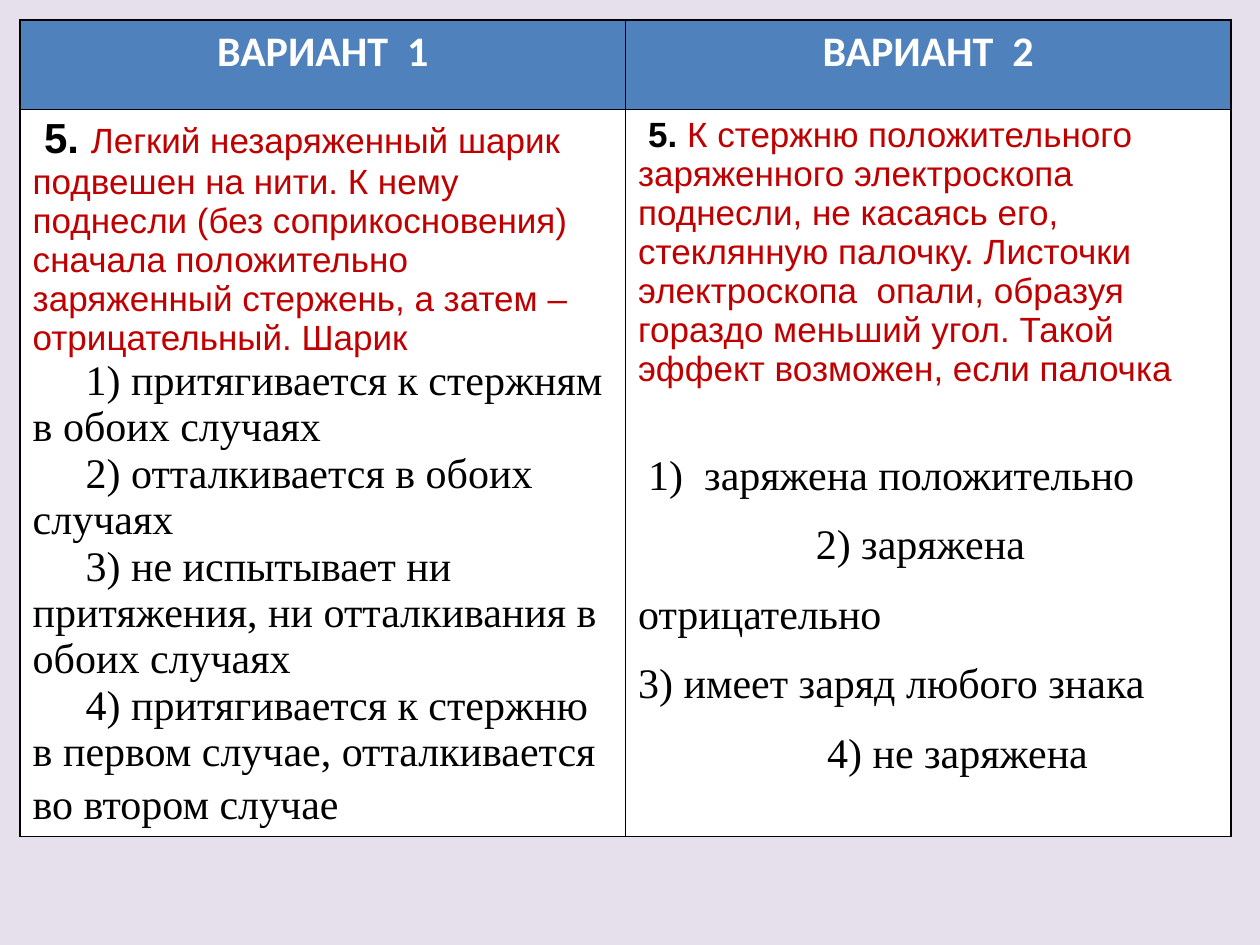
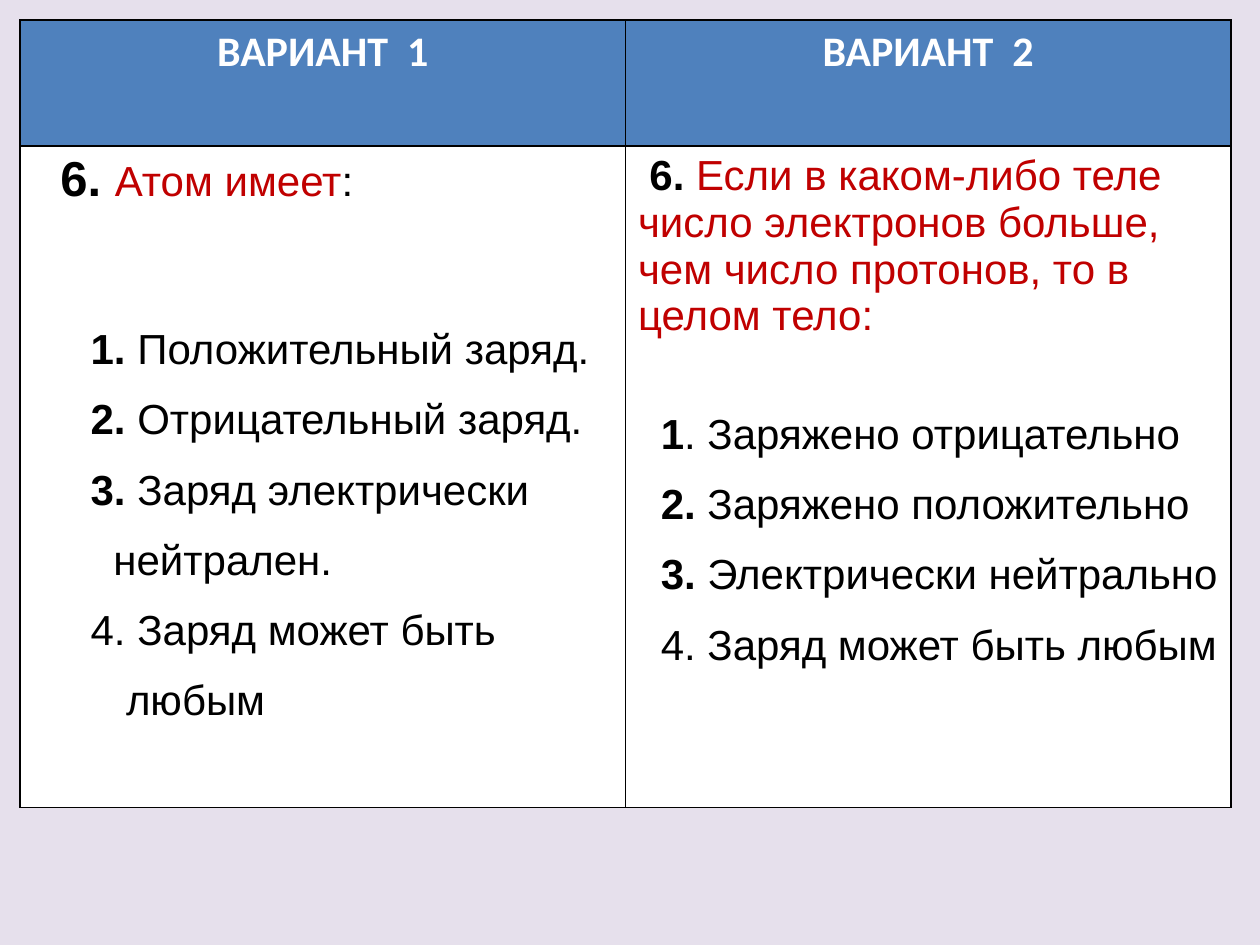
from lxml.etree import SubElement
from pptx import Presentation
from pptx.dml.color import RGBColor
from pptx.enum.text import PP_ALIGN
from pptx.oxml.ns import qn
from pptx.util import Inches, Pt

BACK, HEAD, WHITE, BLACK, RED = "E6E0EC", "4F81BD", "FFFFFF", "000000", "C00000"


def rgb(value):
    """Turn a hex string into a colour."""
    return RGBColor.from_string(value)


def fmt(size=24, name="Arial", color=BLACK, bold=False):
    """Describe the format of a run."""
    return dict(size=Pt(size), name=name, bold=bold, color=color)


PLAIN, BOLD = fmt(), fmt(bold=True)
SERIF = fmt(name="Times New Roman")
TITLE = fmt(name="Calibri", color=WHITE, bold=True)
TASK, SMALL_TASK = fmt(color=RED), fmt(20, color=RED)


def para(*runs, indent=0, before=0, spacing=None):
    """Describe a paragraph: its runs, first-line indent and spacing."""
    return dict(runs=runs, indent=indent, before=before, spacing=spacing)


def options(items, gap):
    """Describe widely spaced answers with a gap above the first one."""
    return [para(*runs, indent=indent, before=0 if i else gap, spacing=1.5)
            for i, (indent, *runs) in enumerate(items)]


class Deck:
    """Holds the presentation, its style and the current slide."""

    def __init__(self):
        """Start a 4:3 presentation."""
        self.prs = Presentation()
        self.prs.slide_width, self.prs.slide_height = Inches(10), Inches(7.5)

    def slide(self):
        """Add a slide with the shared background."""
        self.s = self.prs.slides.add_slide(self.prs.slide_layouts[6])
        fill = self.s.background.fill
        fill.solid()
        fill.fore_color.rgb = rgb(BACK)

    def run(self, p, text, style):
        """Add one formatted run."""
        r = p.add_run()
        r.text = text
        for key, value in style.items():
            if key == "color":
                r.font.color.rgb = rgb(value)
            else:
                setattr(r.font, key, value)

    def cell(self, cell, paras, color, align=PP_ALIGN.LEFT):
        """Fill, outline and write one cell."""
        tcPr = cell._tc.get_or_add_tcPr()
        for side in ("lnL", "lnR", "lnT", "lnB"):
            ln = SubElement(tcPr, qn(f"a:{side}"), w=str(Pt(1)))
            SubElement(SubElement(ln, qn("a:solidFill")), qn("a:srgbClr"), val=BLACK)
        cell.fill.solid()
        cell.fill.fore_color.rgb = rgb(color)
        tf = cell.text_frame
        for i, item in enumerate(paras):
            p = tf.add_paragraph() if i else tf.paragraphs[0]
            values = dict(alignment=align, space_before=Pt(item["before"]),
                          line_spacing=item["spacing"])
            for key, value in values.items():
                setattr(p, key, value)
            p._p.get_or_add_pPr().set("indent", str(Inches(item["indent"])))
            for text, style in item["runs"]:
                self.run(p, text, style)

    def variants(self, head_height, body_height, bodies):
        """Add the two-variant question table."""
        heights = head_height, body_height
        table = self.s.shapes.add_table(
            2, 2, Inches(0.16), Inches(0.16), Inches(9.61), Inches(sum(heights))).table
        table.first_row = table.horz_banding = False
        for row, height in zip(table.rows, heights):
            row.height = Inches(height)
        for i, body in enumerate(bodies):
            head = [para((f"ВАРИАНТ  {i + 1}", TITLE))]
            self.cell(table.cell(0, i), head, HEAD, PP_ALIGN.CENTER)
            self.cell(table.cell(1, i), body, WHITE)


def main():
    """Build and save both slides."""
    deck = Deck()

    deck.slide()
    answers = ["1) притягивается к стержням в обоих случаях",
               "2) отталкивается в обоих случаях",
               "3) не испытывает ни притяжения, ни отталкивания в обоих случаях"]
    ball = [para(("5. ", BOLD),
                 ("Легкий незаряженный шарик подвешен на нити. К нему поднесли "
                  "(без соприкосновения) сначала положительно заряженный стержень, "
                  "а затем – отрицательный. Шарик", SMALL_TASK), indent=0.09),
            *(para((text, SERIF), indent=0.42) for text in answers),
            para(("4) притягивается к стержню в первом случае, отталкивается "
                  "во втором случае", SERIF),
                 (" ", fmt(28, "Times New Roman", bold=True)), indent=0.42)]
    rod = [para(("5. ", fmt(20, bold=True)),
                ("К стержню положительного заряженного электроскопа поднесли, "
                 "не касаясь его, стеклянную палочку. Листочки электроскопа  опали, "
                 "образуя гораздо меньший угол. Такой эффект возможен, если палочка",
                 SMALL_TASK), indent=0.08),
           *options([(0.08, ("1)  заряжена положительно", SERIF)),
                     (1.41, ("2) заряжена отрицательно", SERIF)),
                     (0, ("3) имеет заряд любого знака", SERIF)),
                     (1.5, ("4) не заряжена", SERIF))], 23)]
    deck.variants(0.71, 5.77, [ball, rod])

    deck.slide()
    atom = [para(("6. ", fmt(28, bold=True)), ("Атом имеет", TASK), (":", PLAIN),
                 indent=0.22),
            *options([(0.46, ("1.", BOLD), (" Положительный заряд.", PLAIN)),
                      (0.46, ("2.", BOLD), (" Отрицательный заряд.", PLAIN)),
                      (0.46, ("3. ", BOLD), ("Заряд электрически", PLAIN)),
                      (0.64, ("нейтрален.", PLAIN)),
                      (0.46, ("4. Заряд может быть", PLAIN)),
                      (0.74, ("любым", PLAIN))], 55)]
    body = [para(("6. ", BOLD),
                 ("Если в каком-либо теле число электронов больше, чем число "
                  "протонов, то в целом тело:", TASK), indent=0.09),
            *options([(0.18, ("1", BOLD), (". Заряжено отрицательно", PLAIN)),
                      (0.18, ("2.", BOLD), (" Заряжено положительно", PLAIN)),
                      (0.18, ("3.", BOLD), (" Электрически нейтрально", PLAIN)),
                      (0.18, ("4. Заряд может быть любым", PLAIN))], 27.5)]
    deck.variants(1, 5.25, [atom, body])

    deck.prs.save("out.pptx")


if __name__ == "__main__":
    main()
